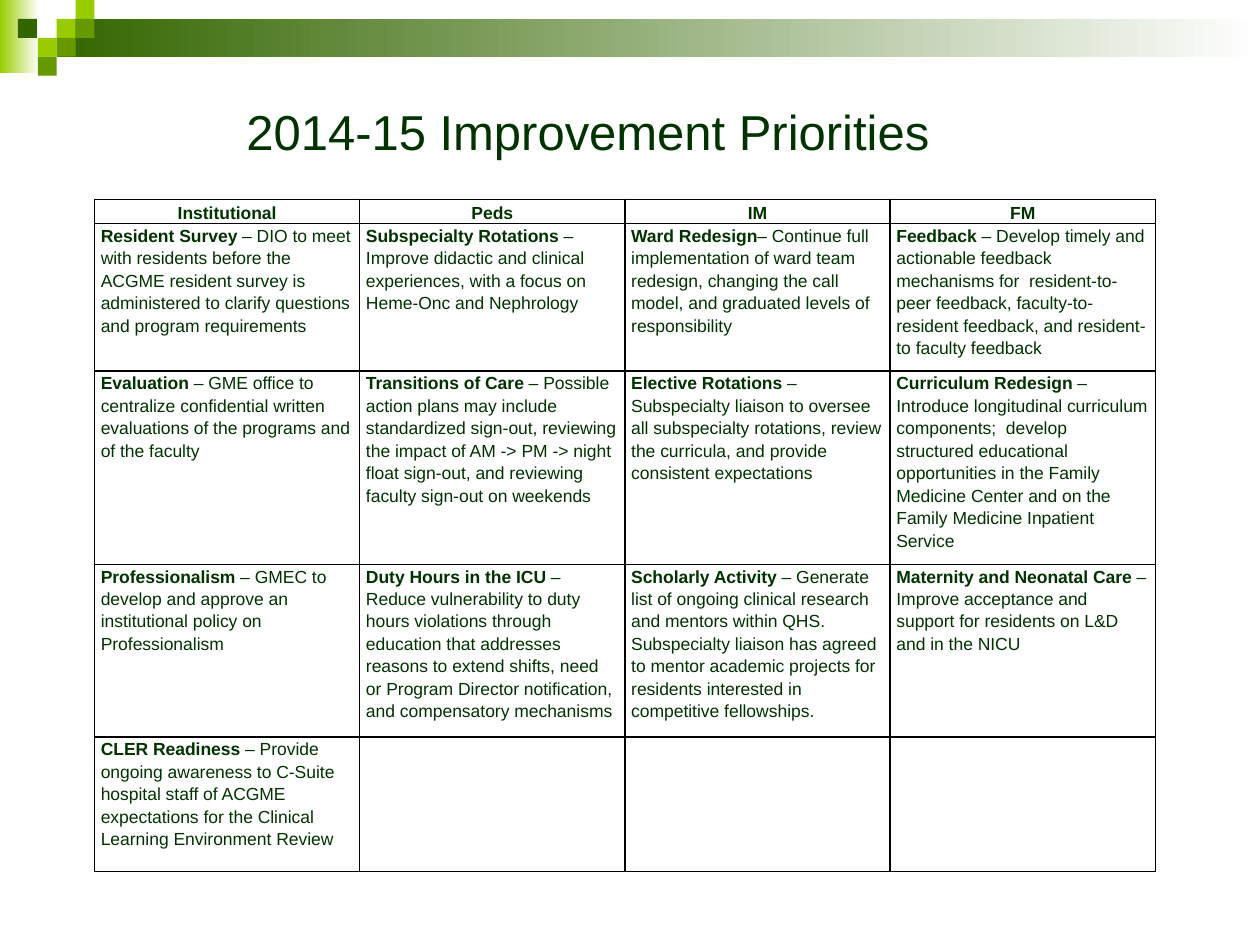
"""Build the 2014-15 improvement priorities slide."""
from lxml import etree
from pptx import Presentation
from pptx import util as u
from pptx.dml.color import RGBColor
from pptx.enum import shapes, text
from pptx.oxml.ns import qn

HUES = {"ink": "003300", "dark": "336600", "mid": "669900",
        "lime": "99CC00", "white": "FFFFFF", "line": "000000"}
UNIT = 0.15


def block(col, row, wide, high, hue, fade=False):
    box = page.shapes.add_shape(shapes.MSO_SHAPE.RECTANGLE,
                                *(u.Inches(n * UNIT) for n in (col, row, wide, high)))
    box.shadow.inherit = False
    box.line.fill.background()
    if fade:
        box.fill.gradient()
        box.fill.gradient_angle = 0
        for stop, tint in zip(box.fill.gradient_stops, (hue, "white")):
            stop.color.rgb = RGBColor.from_string(HUES[tint])
    else:
        box.fill.solid()
        box.fill.fore_color.rgb = RGBColor.from_string(HUES[hue])


def write(para, words, size, bold=False):
    run = para.add_run()
    run.text = words
    run.font.name = "Arial"
    run.font.size = u.Pt(size)
    run.font.bold = bold
    run.font.color.rgb = RGBColor.from_string(HUES["ink"])


deck = Presentation()
deck.slide_width, deck.slide_height = u.Inches(10), u.Inches(7.5)
page = deck.slides.add_slide(deck.slide_layouts[6])
wide, high = deck.slide_width, deck.slide_height

block(0, 0, 2.07, 3.87, "lime", True)
block(3, 1, 63.67, 2, "dark", True)
for col, row, hue in [(3, 1, "lime"), (4, 0, "lime"), (4, 1, "mid"), (2, 2, "lime"),
                      (0.95, 1, "dark"), (3, 2, "mid"), (2, 3, "mid")]:
    block(col, row, 1, 1, hue)

title = page.shapes.add_textbox(int(wide * 0.175), int(high * 0.1),
                                int(wide * 0.583), int(high * 0.077)).text_frame
title.word_wrap = True
title.vertical_anchor = text.MSO_ANCHOR.MIDDLE
title.paragraphs[0].alignment = text.PP_ALIGN.CENTER
write(title.paragraphs[0], "2014-15 Improvement Priorities", 28)

HEADS = ["Institutional", "Peds", "IM", "FM"]
GOALS = [
    [("Resident Survey", " – DIO to meet with residents before the ACGME resident survey is "
      "administered to clarify questions and program requirements"),
     ("Subspecialty Rotations", " – Improve didactic and clinical experiences, with a focus on "
      "Heme-Onc and Nephrology"),
     ("Ward Redesign", "– Continue full implementation of ward team redesign, changing the call "
      "model, and graduated levels of responsibility"),
     ("Feedback", " – Develop timely and actionable feedback mechanisms for  resident-to-peer "
      "feedback, faculty-to-resident feedback, and resident-to faculty feedback")],
    [("Evaluation", " – GME office to centralize confidential written evaluations of the programs "
      "and of the faculty"),
     ("Transitions of Care", " – Possible action plans may include standardized sign-out, "
      "reviewing the impact of AM -> PM -> night float sign-out, and reviewing faculty sign-out "
      "on weekends"),
     ("Elective Rotations", " – Subspecialty liaison to oversee all subspecialty rotations, "
      "review the curricula, and provide consistent expectations"),
     ("Curriculum Redesign", " – Introduce longitudinal curriculum components;  develop "
      "structured educational opportunities in the Family Medicine Center and on the Family "
      "Medicine Inpatient Service")],
    [("Professionalism", " – GMEC to develop and approve an institutional policy on "
      "Professionalism"),
     ("Duty Hours in the ICU", " – Reduce vulnerability to duty hours violations through "
      "education that addresses reasons to extend shifts, need or Program Director notification, "
      "and compensatory mechanisms"),
     ("Scholarly Activity", " – Generate list of ongoing clinical research and mentors within "
      "QHS.  Subspecialty liaison has agreed to mentor academic projects for residents interested "
      "in competitive fellowships."),
     ("Maternity and Neonatal Care", " – Improve acceptance and support for residents on L&D and "
      "in the NICU")],
    [("CLER Readiness", " – Provide ongoing awareness to C-Suite hospital staff of ACGME "
      "expectations for the Clinical Learning Environment Review")],
]
ROWS = [0.18, 1.17, 1.53, 1.37, 1.07]

grid = page.shapes.add_table(len(ROWS), len(HEADS), int(wide * 0.075), int(high * 0.211),
                             int(wide * 0.842), u.Inches(sum(ROWS))).table
grid.first_row = grid.horz_banding = False
for row, tall in zip(grid.rows, ROWS):
    row.height = u.Inches(tall)

for cell in grid.iter_cells():
    cell.fill.background()
    cell.margin_left = cell.margin_right = u.Inches(0.05)
    cell.margin_top = cell.margin_bottom = 0
    props = cell._tc.get_or_add_tcPr()
    for spot, side in enumerate(("a:lnL", "a:lnR", "a:lnT", "a:lnB")):
        edge = etree.Element(qn(side), w=str(u.Pt(1)))
        fill = etree.SubElement(edge, qn("a:solidFill"))
        etree.SubElement(fill, qn("a:srgbClr"), val=HUES["line"])
        props.insert(spot, edge)

for row, items in enumerate([[(head, "") for head in HEADS]] + GOALS):
    for col, (lead, rest) in enumerate(items):
        cell = grid.cell(row, col)
        para = cell.text_frame.paragraphs[0]
        para.line_spacing = 1.15
        write(para, lead, 10, True)
        if rest:
            write(para, rest, 10)
        else:
            para.alignment = text.PP_ALIGN.CENTER
            cell.vertical_anchor = text.MSO_ANCHOR.MIDDLE

deck.save("out.pptx")
